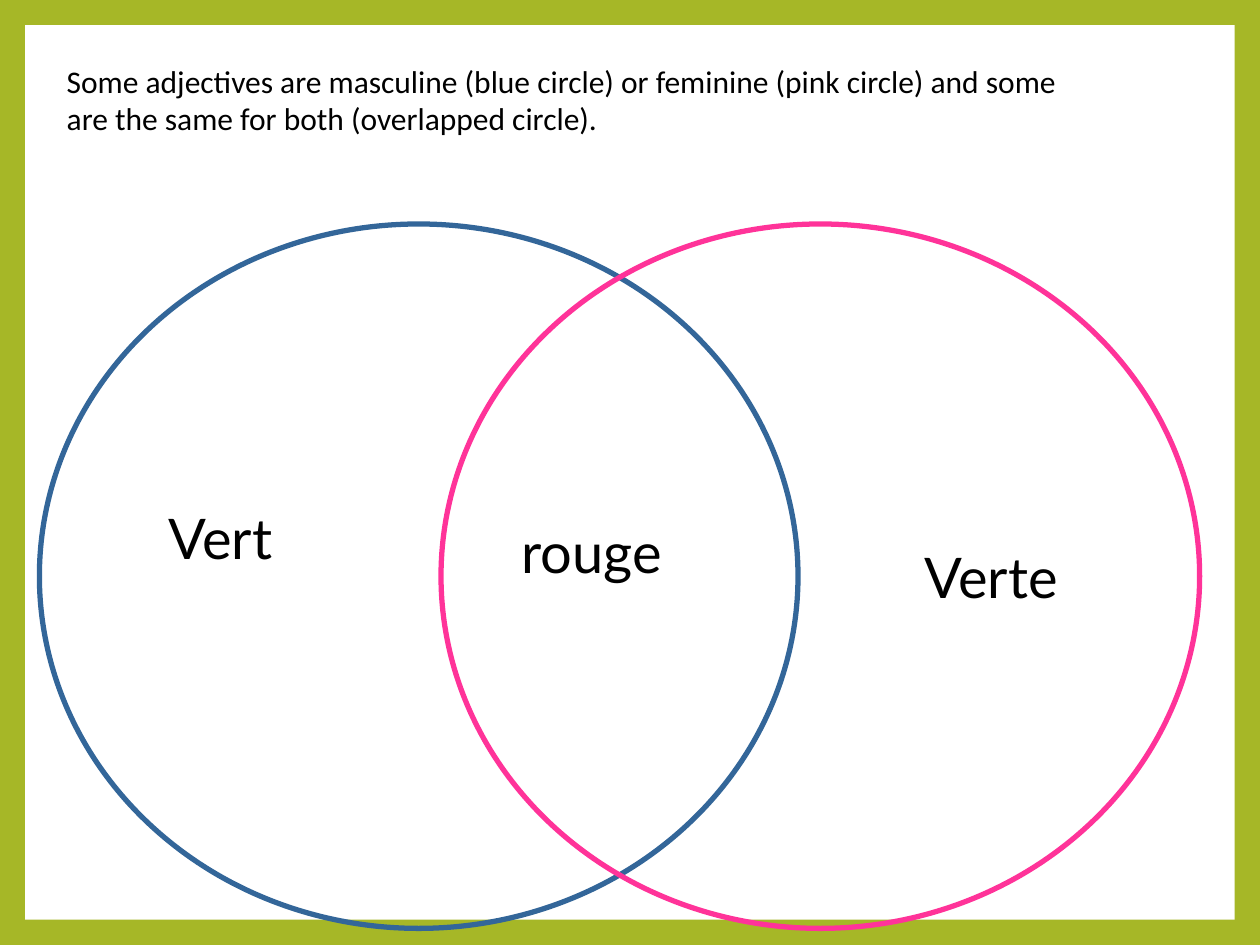
from pptx import Presentation
from pptx.dml.color import RGBColor
from pptx.enum import shapes, text
from pptx.util import Pt


def colour(hex_string):
    return RGBColor.from_string(hex_string)


deck = Presentation()
deck.slide_width, deck.slide_height = Pt(720), Pt(540)
slide = deck.slides.add_slide(deck.slide_layouts[6])

# Green border around a white page
slide.background.fill.solid()
slide.background.fill.fore_color.rgb = colour("A6B727")
margin = 14.4
page = slide.shapes.add_shape(
    shapes.MSO_SHAPE.RECTANGLE, Pt(margin), Pt(margin),
    Pt(720 - 2 * margin), Pt(540 - 2 * margin))
page.shadow.inherit = False
page.fill.solid()
page.fill.fore_color.rgb = colour("FFFFFF")
page.line.fill.background()

# Overlapping circles: masculine in blue, feminine in pink
for left, outline in ((22.5, "336699"), (252, "FF3399")):
    circle = slide.shapes.add_shape(
        shapes.MSO_SHAPE.OVAL, Pt(left), Pt(128), Pt(433.5), Pt(402.5))
    circle.shadow.inherit = False
    circle.fill.background()
    circle.line.color.rgb = colour(outline)
    circle.line.width = Pt(3)

# Adjectives in the circles, then the explanation at the top
intro = ("Some adjectives are masculine (blue circle) or feminine (pink circle) "
         "and some are the same for both (overlapped circle).")
for words, left, top, width, height, font, size in (
        ("Vert", 89.3, 284.4, 96.5, 45.4, "Lato", 32),
        ("Verte", 521.3, 306.7, 164.2, 45.4, "Lato", 32),
        ("rouge", 290.9, 292.3, 164.2, 45.4, "Lato", 32),
        (intro, 31, 31.7, 601.2, 51.1, "Calibri", 18)):
    label = slide.shapes.add_textbox(Pt(left), Pt(top), Pt(width), Pt(height))
    frame = label.text_frame
    frame.word_wrap = True
    frame.auto_size = text.MSO_AUTO_SIZE.SHAPE_TO_FIT_TEXT
    paragraph = frame.paragraphs[0]
    paragraph.text = words
    paragraph.font.name = font
    paragraph.font.size = Pt(size)
    paragraph.font.color.rgb = colour("000000")

deck.save("out.pptx")
